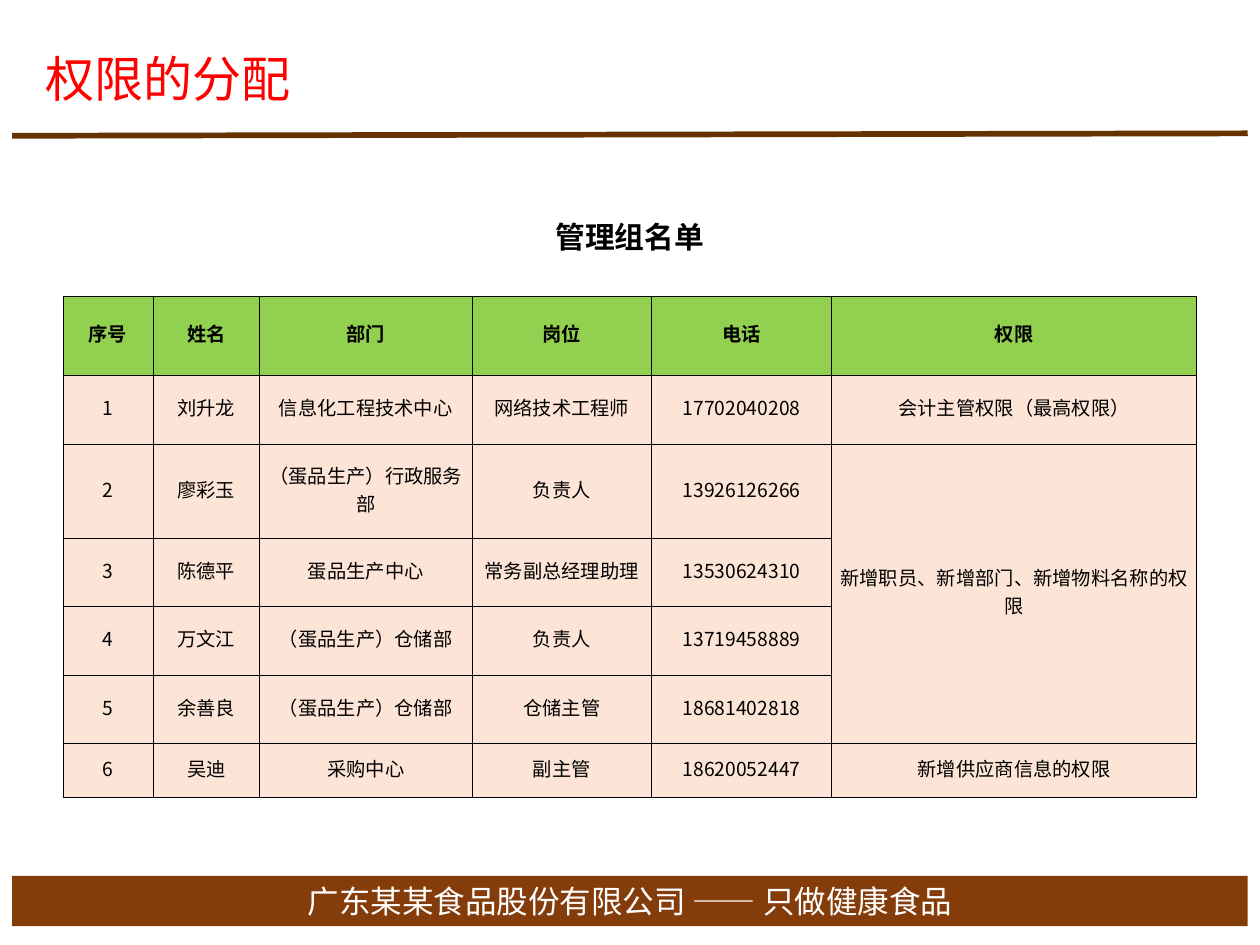
from lxml.etree import SubElement
from pptx import Presentation
from pptx.dml.color import RGBColor
from pptx.enum.shapes import MSO_CONNECTOR, MSO_SHAPE
from pptx.enum.text import MSO_ANCHOR, PP_ALIGN
from pptx.oxml import parse_xml
from pptx.oxml.ns import nsdecls, qn
from pptx.util import Pt

SANS = "Noto Sans CJK SC"
HEADS = ["序号", "姓名", "部门", "岗位", "电话", "权限"]
STAFF = [
    ["1", "刘升龙", "信息化工程技术中心", "网络技术工程师", "17702040208", "会计主管权限（最高权限）"],
    ["2", "廖彩玉", "（蛋品生产）行政服务部", "负责人", "13926126266", "新增职员、新增部门、新增物料名称的权限"],
    ["3", "陈德平", "蛋品生产中心", "常务副总经理助理", "13530624310", ""],
    ["4", "万文江", "（蛋品生产）仓储部", "负责人", "13719458889", ""],
    ["5", "余善良", "（蛋品生产）仓储部", "仓储主管", "18681402818", ""],
    ["6", "吴迪", "采购中心", "副主管", "18620052447", "新增供应商信息的权限"],
]


def color(code):
    return RGBColor.from_string(code)


def assign(item, values):
    for name, value in values.items():
        setattr(item, name, value)


class Page:
    base = {"size": Pt(11), "name": "Arial", "bold": False}
    inset = {"margin_left": Pt(0.7), "margin_top": Pt(0.7),
             "margin_right": Pt(0.7), "margin_bottom": Pt(3.6)}

    def __init__(self, deck):
        self.slide = deck.slides.add_slide(deck.slide_layouts[6])
        self.shapes = self.slide.shapes

    def label(self, frame, text, ink, align=PP_ALIGN.CENTER, **style):
        frame.word_wrap = True
        para = frame.paragraphs[0]
        para.alignment = align
        run = para.add_run()
        run.text = text
        assign(run.font, {**self.base, **style})
        run.font.color.rgb = color(ink)
        SubElement(run._r.get_or_add_rPr(), qn("a:ea"), typeface=SANS)

    def band(self, box, text, fill):
        shape = self.shapes.add_shape(MSO_SHAPE.RECTANGLE, *map(Pt, box))
        shape.shadow.inherit = False
        shape.fill.solid()
        shape.fill.fore_color.rgb = color(fill)
        shape.line.fill.background()
        shape.text_frame.vertical_anchor = MSO_ANCHOR.MIDDLE
        self.label(shape.text_frame, text, "FFFFFF", size=Pt(18), name=SANS)

    def rule(self, ends, ink, width):
        line = self.shapes.add_connector(MSO_CONNECTOR.STRAIGHT, *map(Pt, ends))
        line.line.color.rgb = color(ink)
        line.line.width = Pt(width)
        SubElement(line._element.spPr, qn("a:effectLst"))

    def title(self, box, text, ink):
        frame = self.shapes.add_textbox(*map(Pt, box)).text_frame
        assign(frame, {"margin_top": 0, "margin_bottom": Pt(3.6),
                       "vertical_anchor": MSO_ANCHOR.MIDDLE})
        self.label(frame, text, ink, PP_ALIGN.LEFT, size=Pt(28), name=SANS)

    def border(self, cell, sides):
        props = cell._tc.get_or_add_tcPr()
        for spot, side in enumerate(sides):
            props.insert(spot, parse_xml(
                f'<a:ln{side} {nsdecls("a")} w="{Pt(0.5)}"><a:solidFill>'
                f'<a:srgbClr val="000000"/></a:solidFill></a:ln{side}>'))

    def cell(self, cell, text, fill=None, sides="LRTB", **style):
        assign(cell, {**self.inset, "vertical_anchor": MSO_ANCHOR.MIDDLE})
        if fill:
            cell.fill.solid()
            cell.fill.fore_color.rgb = color(fill)
        else:
            cell.fill.background()
        self.border(cell, sides)
        if text:
            self.label(cell.text_frame, text, "000000", **style)

    def table(self, box, cols, rows):
        table = self.shapes.add_table(len(rows), len(cols), *map(Pt, box)).table
        assign(table, {"first_row": False, "horz_banding": False})
        for col, width in zip(table.columns, cols):
            col.width = Pt(width)
        for row, height in zip(table.rows, rows):
            row.height = Pt(height)
        return table


def main():
    deck = Presentation()
    assign(deck, {"slide_width": Pt(720), "slide_height": Pt(540)})
    page = Page(deck)

    # Footer, rule and title
    page.band((7, 500.5, 706, 28.7), "广东某某食品股份有限公司 —— 只做健康食品", "843C0B")
    page.rule((7, 77.6, 713, 76.2), "663300", 3.25)
    page.title((19.2, 26, 404, 41), "权限的分配", "FF0000")

    # Staff table: caption row, heads, then one row each
    table = page.table((36, 103, 648, 353), (51.4, 61.1, 121.2, 102.8, 102.8, 208.7),
                       (66.4, 45.2, 39.2, 53.8, 39.2, 39.2, 39.2, 30.8))
    for col, head in enumerate(HEADS):
        page.cell(table.cell(0, col), "" if col else "管理组名单",
                  sides="B", size=Pt(17), bold=True)
        page.cell(table.cell(1, col), head, "92D050", bold=True)
    for row, person in enumerate(STAFF, 2):
        for col, text in enumerate(person):
            font = SANS if text.isdigit() else "Arial"
            page.cell(table.cell(row, col), text, "FCE4D6", name=font)

    # Merged cells
    table.cell(0, 0).merge(table.cell(0, 5))
    table.cell(3, 5).merge(table.cell(6, 5))

    deck.save("out.pptx")


if __name__ == "__main__":
    main()
